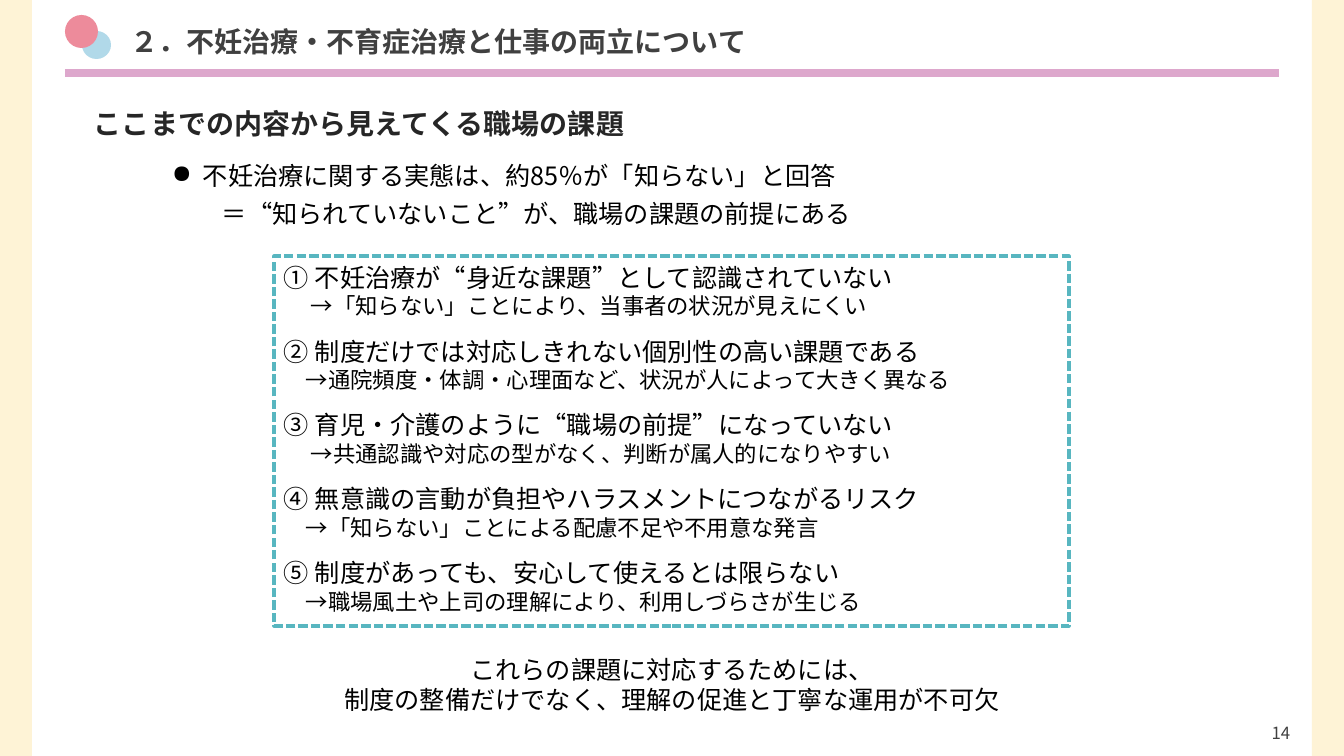
from pptx import Presentation, util as u
from pptx.dml.color import RGBColor
from pptx.enum import dml, shapes, text
from pptx.oxml.ns import qn
from lxml import etree

TITLE = "２．不妊治療・不育症治療と仕事の両立について"
HEAD = "ここまでの内容から見えてくる職場の課題"
FACT = "不妊治療に関する実態は、約85％が「知らない」と回答"
MEAN = "＝“知られていないこと”が、職場の課題の前提にある"
# issue, effect, indent of the effect in px
ISSUES = [
    ("① 不妊治療が“身近な課題”として認識されていない",
     "→「知らない」ことにより、当事者の状況が見えにくい", 27),
    ("② 制度だけでは対応しきれない個別性の高い課題である",
     "→通院頻度・体調・心理面など、状況が人によって大きく異なる", 22),
    ("③ 育児・介護のように“職場の前提”になっていない",
     "→共通認識や対応の型がなく、判断が属人的になりやすい", 27),
    ("④ 無意識の言動が負担やハラスメントにつながるリスク",
     "→「知らない」ことによる配慮不足や不用意な発言", 22),
    ("⑤ 制度があっても、安心して使えるとは限らない",
     "→職場風土や上司の理解により、利用しづらさが生じる", 22),
]
CLOSE = ["これらの課題に対応するためには、",
         "制度の整備だけでなく、理解の促進と丁寧な運用が不可欠"]
PAGE = "14"

FONT = "Noto Sans CJK JP"
CREAM = RGBColor(0xFE, 0xF3, 0xD6)
PINK = RGBColor(0xDD, 0xA7, 0xCC)
SKY = RGBColor(0xB1, 0xD9, 0xE9)
ROSE = RGBColor(0xED, 0x8B, 0x9B)
TEAL = RGBColor(0x58, 0xB6, 0xC0)
WHITE = RGBColor(0xFF, 0xFF, 0xFF)
BLACK = RGBColor(0, 0, 0)
DARK = RGBColor(0x26, 0x26, 0x26)
GREY = RGBColor(0x40, 0x40, 0x40)
WIDE, HIGH, SIDE = 1344, 756, 32
CENTER = text.PP_ALIGN.CENTER
RECT, OVAL = shapes.MSO_SHAPE.RECTANGLE, shapes.MSO_SHAPE.OVAL


def px(n):
    return u.Emu(round(n * 914400 / 100.8))


def draw(host, kind, fill, *box):
    shape = host.add_shape(kind, *map(px, box))
    shape.shadow.inherit = False
    shape.fill.solid()
    shape.fill.fore_color.rgb = fill
    shape.line.fill.background()
    return shape


def write(shape, lines, color, bold=False, align=text.PP_ALIGN.LEFT,
          anchor=text.MSO_ANCHOR.TOP):
    """Fill a shape with (wording, size, format) lines."""
    frame = shape.text_frame
    form = dict(word_wrap=True, vertical_anchor=anchor, margin_left=px(10),
                margin_right=px(10), margin_top=px(6), margin_bottom=px(5))
    for key, val in form.items():
        setattr(frame, key, val)
    for i, (words, size, look) in enumerate(lines):
        para = frame.add_paragraph() if i else frame.paragraphs[0]
        props = para._p.get_or_add_pPr()
        props.set("marL", str(px(look.get("left", 0))))
        props.set("indent", str(px(look.get("hang", 0))))
        if "bullet" in look:
            etree.SubElement(props, qn("a:buChar")).set("char", look["bullet"])
        form = dict(alignment=align, line_spacing=u.Pt(size * 1.2),
                    space_before=u.Pt(look.get("before", 0)),
                    space_after=u.Pt(look.get("after", 0)))
        for key, val in form.items():
            setattr(para, key, val)
        run = para.add_run()
        run.text = words
        form = dict(name=FONT, size=u.Pt(size), bold=bold)
        for key, val in form.items():
            setattr(run.font, key, val)
        run.font.color.rgb = color
        east = etree.SubElement(run._r.get_or_add_rPr(), qn("a:ea"))
        east.set("typeface", FONT)


def label(box, lines, color, **look):
    write(slide.shapes.add_textbox(*map(px, box)), lines, color, **look)


deck = Presentation()
deck.slide_width, deck.slide_height = px(WIDE), px(HIGH)
slide = deck.slides.add_slide(deck.slide_layouts[6])

for left in (0, WIDE - SIDE):
    draw(slide.shapes, RECT, CREAM, left, 0, SIDE, HIGH)

rule = slide.shapes.add_connector(shapes.MSO_CONNECTOR.STRAIGHT,
                                  px(65), px(73), px(1279), px(73))
rule.line.color.rgb = PINK
rule.line.width = u.Pt(6)
etree.SubElement(rule._element.spPr, qn("a:effectLst"))

mark = slide.shapes.add_group_shape()
draw(mark.shapes, OVAL, SKY, 82, 31, 29, 28)
draw(mark.shapes, OVAL, ROSE, 65, 15, 33, 33)

label((120, 18, 755, 44), [(TITLE, 20, {})], GREY, bold=True)
label((84, 100, 981, 44), [(HEAD, 20, {})], DARK, bold=True)
label((162, 154, 852, 80),
      [(FACT, 18, dict(left=31, hang=-31, bullet="●")),
       (MEAN, 18, dict(left=50, before=6))], BLACK)

panel = draw(slide.shapes, RECT, WHITE, 274, 256, 795, 370)
panel.line.color.rgb = TEAL
panel.line.width = u.Pt(2.25)
panel.line.dash_style = dml.MSO_LINE.SQUARE_DOT
rows = []
for issue, effect, left in ISSUES:
    rows += [(issue, 18, {}), (effect, 16, dict(left=left, after=12))]
rows[-1][2]["after"] = 0
write(panel, rows, BLACK)

label((218, 648, 908, 72), [(words, 18, {}) for words in CLOSE], BLACK,
      align=CENTER)
label((1242, 713, 78, 39), [(PAGE, 12, {})], GREY, align=CENTER,
      anchor=text.MSO_ANCHOR.MIDDLE)

deck.save("out.pptx")
